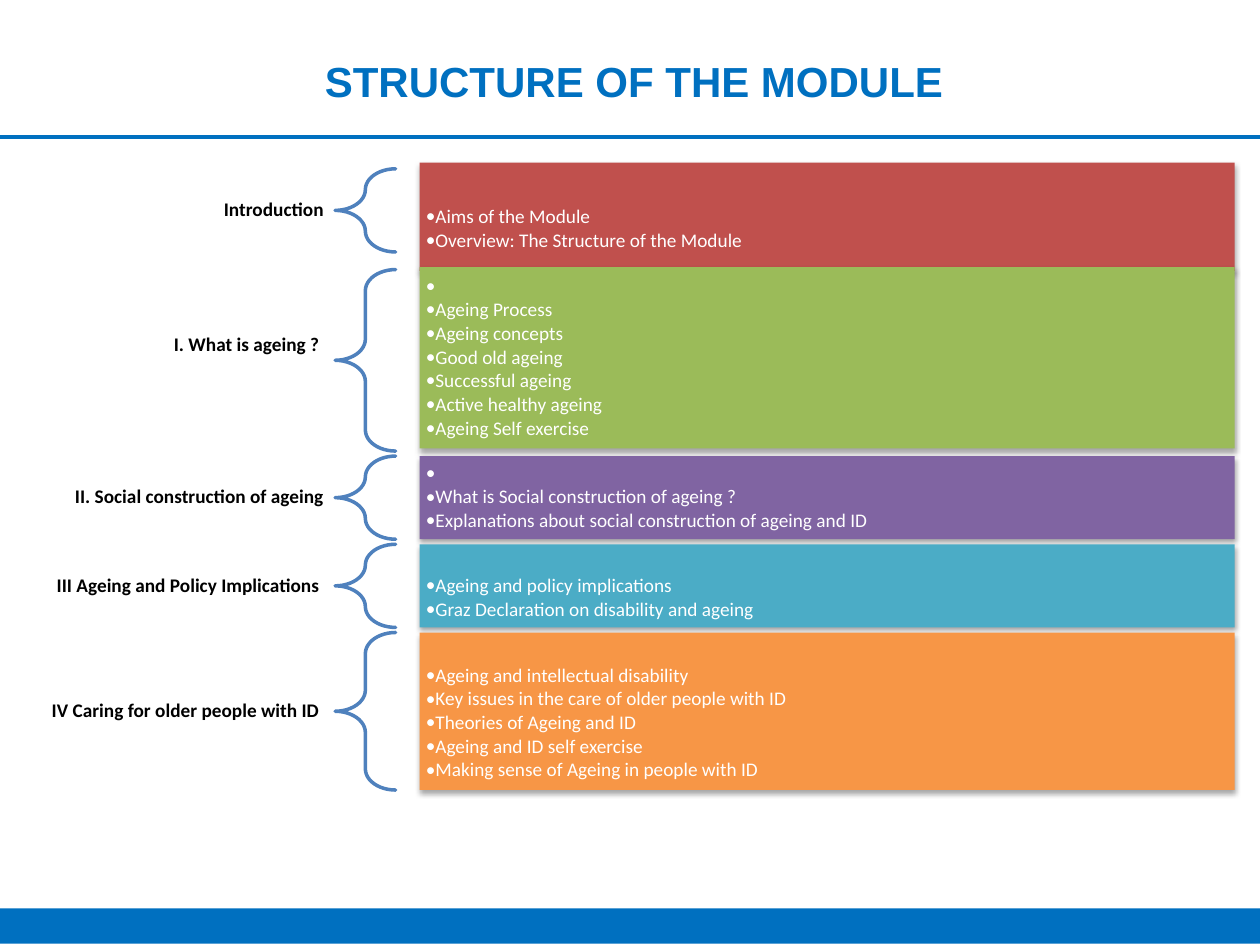
from lxml import etree
from pptx import Presentation
from pptx.dml.color import RGBColor
from pptx.enum.shapes import MSO_CONNECTOR, MSO_SHAPE
from pptx.enum.text import MSO_ANCHOR, PP_ALIGN
from pptx.oxml.ns import qn
from pptx.util import Inches, Pt

THEME = {
    "blue": "0070C0", "brace": "4F81BD", "label": "000000", "item": "FFFFFF",
    "title_font": "Arial", "body_font": "Calibri", "title_size": 24, "body_size": 11,
}
TITLE = "STRUCTURE OF THE MODULE"

# "brace" and "panel" are (top, height); "drop" lowers the items in their panel,
# "rise" lifts the label above the middle of its brace.
SECTIONS = [
    {"label": "Introduction", "color": "C0504D", "drop": 0.2,
     "brace": (1.34, 0.66), "panel": (1.29, 0.86),
     "items": ["Aims of the Module", "Overview: The Structure of the Module"]},
    {"label": "I. What is ageing ? ", "color": "9BBB59", "rise": 0.12,
     "brace": (2.14, 1.44), "panel": (2.12, 1.44),
     "items": [" ", "Ageing Process", "Ageing concepts", "Good old ageing",
               "Successful ageing", "Active healthy ageing", "Ageing Self exercise"]},
    {"label": "II. Social construction of ageing", "color": "8064A2",
     "brace": (3.62, 0.66), "panel": (3.62, 0.66),
     "items": [" ", "What is Social construction of ageing ?",
               "Explanations about social construction of ageing and ID"]},
    {"label": "III Ageing and Policy Implications ", "color": "4BACC6", "drop": 0.19,
     "brace": (4.32, 0.66), "panel": (4.32, 0.66),
     "items": ["Ageing and policy implications",
               "Graz Declaration on disability and ageing"]},
    {"label": "IV Caring for older people with ID ", "color": "F79646", "drop": 0.19,
     "brace": (5.02, 1.25), "panel": (5.02, 1.25),
     "items": ["Ageing and intellectual disability",
               "Key issues in the care of older people with ID",
               "Theories of Ageing and ID", "Ageing and ID self exercise",
               "Making sense of Ageing in people with ID"]},
]
LABEL_X, LABEL_W, LABEL_H = 0.28, 2.38, 0.24
BRACE_X, BRACE_W = 2.66, 0.48
PANEL_X, PANEL_W = 3.33, 6.47
BULLET_INDENT = 0.06


def rgb(name):
    return RGBColor.from_string(THEME.get(name, name))


def add_run(p, text, color, size="body_size", font="body_font", bold=False):
    r = p.add_run()
    r.text = text
    r.font.size, r.font.name, r.font.bold = Pt(THEME[size]), THEME[font], bold
    r.font.color.rgb = rgb(color)


def set_frame(tf, left, top, right, bottom):
    tf.word_wrap = True
    tf.vertical_anchor = MSO_ANCHOR.MIDDLE
    tf.margin_left, tf.margin_top = Inches(left), Inches(top)
    tf.margin_right, tf.margin_bottom = Inches(right), Inches(bottom)


def add_shape(s, kind, x, y, w, h, fill=None):
    sp = s.shapes.add_shape(kind, Inches(x), Inches(y), Inches(w), Inches(h))
    sp.shadow.inherit = False
    if fill:
        sp.fill.solid()
        sp.fill.fore_color.rgb = rgb(fill)
        sp.line.fill.background()
    else:
        sp.fill.background()
    return sp


def add_text(s, x, y, w, h):
    return s.shapes.add_textbox(Inches(x), Inches(y), Inches(w), Inches(h)).text_frame


def add_drop_shadow(sp):
    effects = sp._element.spPr.find(qn("a:effectLst"))
    shadow = etree.SubElement(effects, qn("a:outerShdw"), blurRad=str(Pt(3.1)),
                              dist=str(Pt(1.8)), dir="5400000", rotWithShape="0")
    color = etree.SubElement(shadow, qn("a:srgbClr"), val="000000")
    etree.SubElement(color, qn("a:alpha"), val="35000")


def add_bullet(p):
    pPr = p._p.get_or_add_pPr()
    pPr.set("marL", str(Inches(BULLET_INDENT)))
    pPr.set("indent", str(-Inches(BULLET_INDENT)))
    etree.SubElement(pPr, qn("a:buFont"), typeface=THEME["body_font"])
    etree.SubElement(pPr, qn("a:buChar"), char="•")


def add_label(s, section):
    top, height = section["brace"]
    y = top + (height - LABEL_H) / 2 - section.get("rise", 0)
    tf = add_text(s, LABEL_X, y, LABEL_W, LABEL_H)
    set_frame(tf, 0.09, 0.03, 0.09, 0.03)
    p = tf.paragraphs[0]
    p.alignment, p.line_spacing = PP_ALIGN.RIGHT, 0.9
    add_run(p, section["label"], "label", bold=True)


def add_brace(s, section):
    top, height = section["brace"]
    sp = add_shape(s, MSO_SHAPE.LEFT_BRACE, BRACE_X, top, BRACE_W, height)
    sp.adjustments[0], sp.adjustments[1] = 0.35, 0.5
    sp.line.color.rgb = rgb("brace")
    sp.line.width = Pt(2)
    sp._element.spPr.find(qn("a:ln")).set("cap", "rnd")


def add_panel(s, section):
    top, height = section["panel"]
    sp = add_shape(s, MSO_SHAPE.RECTANGLE, PANEL_X, top, PANEL_W, height, section["color"])
    add_drop_shadow(sp)
    tf = sp.text_frame
    set_frame(tf, 0.05, 0.05 + section.get("drop", 0), 0.05, 0.05)
    for i, item in enumerate(section["items"]):
        p = tf.add_paragraph() if i else tf.paragraphs[0]
        add_bullet(p)
        p.alignment, p.line_spacing, p.space_after = PP_ALIGN.LEFT, 0.9, Pt(1.65)
        add_run(p, item, "item")


def add_frame(s):
    add_shape(s, MSO_SHAPE.RECTANGLE, 0, 7.21, 10, 0.28, "blue")
    rule = s.shapes.add_connector(MSO_CONNECTOR.STRAIGHT, Inches(0), Inches(1.09),
                                  Inches(10), Inches(1.09))
    rule.line.color.rgb = rgb("blue")
    rule.line.width = Pt(2.25)
    etree.SubElement(rule._element.spPr, qn("a:effectLst"))
    tf = add_text(s, 2.48, 0.29, 6.61, 0.71)
    set_frame(tf, 0.1, 0.05, 0.1, 0.06)
    add_run(tf.paragraphs[0], TITLE, "blue", "title_size", "title_font", True)


def main():
    prs = Presentation()
    prs.slide_width, prs.slide_height = Inches(10), Inches(7.5)
    s = prs.slides.add_slide(prs.slide_layouts[6])
    add_frame(s)
    for section in SECTIONS:
        add_label(s, section)
        add_brace(s, section)
        add_panel(s, section)
    prs.save("out.pptx")


if __name__ == "__main__":
    main()
